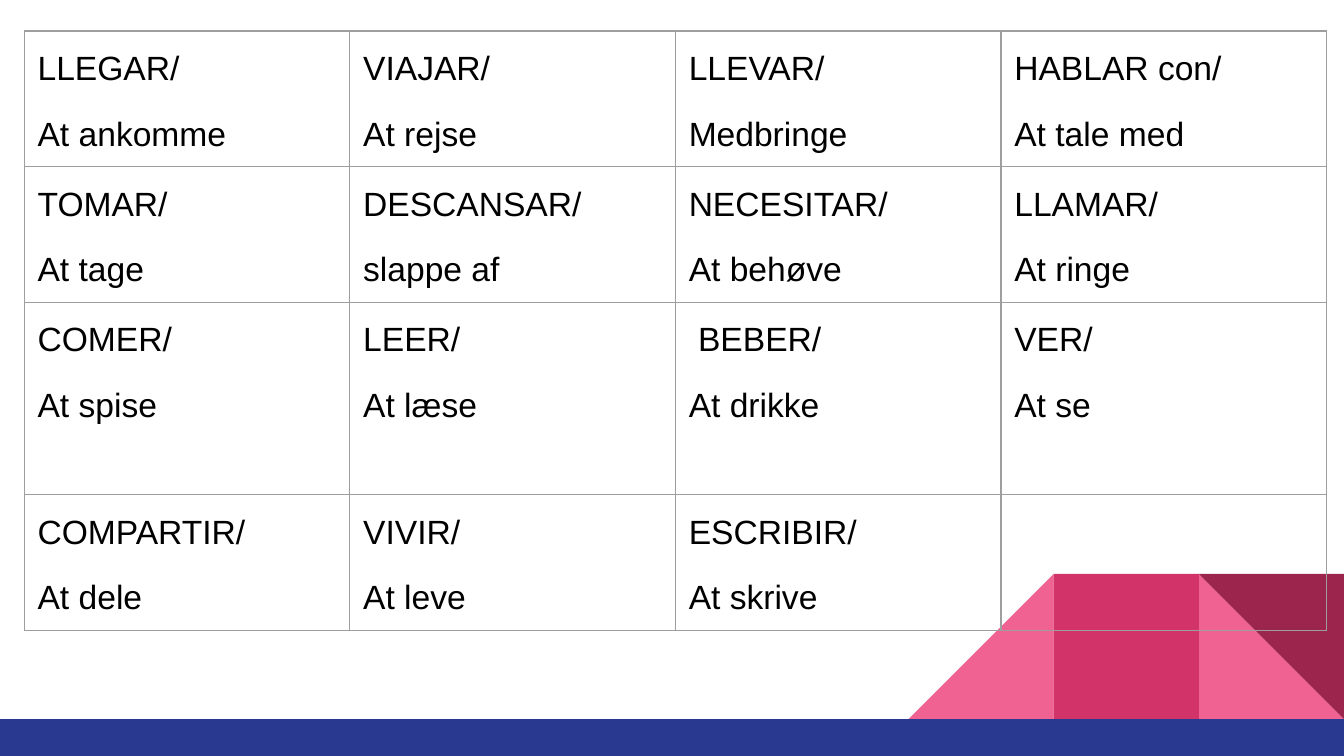
from typing import NamedTuple

from lxml import etree
from pptx import Presentation
from pptx.dml.color import RGBColor
from pptx.enum.shapes import MSO_SHAPE
from pptx.oxml.ns import qn
from pptx.util import Inches, Pt

RECT = MSO_SHAPE.RECTANGLE
TRIANGLE = MSO_SHAPE.RIGHT_TRIANGLE

PINK, ROSE, WINE, NAVY = "F06292", "D23369", "9C254D", "2A3990"
TEXT, GRID = "000000", "9E9E9E"
FONT = "Arial"

SLIDE_WIDTH = 10
SLIDE_HEIGHT = SLIDE_WIDTH * 9 / 16
BAND_TOP = 5.35
TILE = 1.08
TILES_LEFT, TILES_TOP = 6.76, 4.27
TABLE_WIDTH = 9.69
ROW_HEIGHTS = [1.01, 1.01, 1.43, 1.01]


class Block(NamedTuple):
    kind: MSO_SHAPE
    left: float
    top: float
    width: float
    height: float
    color: str
    rotation: int = 0


class Verb(NamedTuple):
    spanish: str
    danish: str


def tile(kind: MSO_SHAPE, column: int, color: str, rotation: int = 0) -> Block:
    left = TILES_LEFT + column * TILE
    return Block(kind, left, TILES_TOP, TILE, TILE, color, rotation)


BLOCKS = [
    tile(TRIANGLE, 2, PINK),
    tile(TRIANGLE, 0, PINK, 270),
    tile(RECT, 1, ROSE),
    tile(TRIANGLE, 2, WINE, 180),
    Block(RECT, 0, BAND_TOP, SLIDE_WIDTH, SLIDE_HEIGHT - BAND_TOP, NAVY),
]

VERBS = [
    [Verb("LLEGAR/", "At ankomme"), Verb("VIAJAR/", "At rejse"),
     Verb("LLEVAR/", "Medbringe"), Verb("HABLAR con/", "At tale med")],
    [Verb("TOMAR/", "At tage"), Verb("DESCANSAR/", "slappe af"),
     Verb("NECESITAR/", "At behøve"), Verb("LLAMAR/", "At ringe")],
    [Verb("COMER/", "At spise"), Verb("LEER/", "At læse"),
     Verb(" BEBER/", "At drikke"), Verb("VER/", "At se")],
    [Verb("COMPARTIR/", "At dele"), Verb("VIVIR/", "At leve"),
     Verb("ESCRIBIR/", "At skrive")],
]


def rgb(color: str) -> RGBColor:
    return RGBColor.from_string(color)


def add_block(s, block: Block) -> None:
    sp = s.shapes.add_shape(block.kind, Inches(block.left), Inches(block.top),
                            Inches(block.width), Inches(block.height))
    sp.rotation = block.rotation
    sp.shadow.inherit = False
    sp.fill.solid()
    sp.fill.fore_color.rgb = rgb(block.color)
    sp.line.fill.background()


def format_cell(cell) -> None:
    """Give the cell a thin border on all sides, even margins and no fill."""
    tcPr = cell._tc.get_or_add_tcPr()
    for side in ("lnL", "lnR", "lnT", "lnB"):
        ln = etree.SubElement(tcPr, qn(f"a:{side}"), w=str(Pt(0.75)))
        fill = etree.SubElement(ln, qn("a:solidFill"))
        etree.SubElement(fill, qn("a:srgbClr"), val=GRID)
    cell.fill.background()
    cell.margin_left = cell.margin_right = Inches(0.1)
    cell.margin_top = cell.margin_bottom = Inches(0.1)


def write_verb(cell, verb: Verb) -> None:
    tf = cell.text_frame
    tf.text = "\n".join(verb)
    for p in tf.paragraphs:
        p.line_spacing = 1.15
        p.font.name = FONT
        p.font.size = Pt(18)
        p.font.color.rgb = rgb(TEXT)
    tf.paragraphs[1].space_before = Pt(12)


def add_verb_table(s, verbs: list[list[Verb]]) -> None:
    rows, cols = len(verbs), len(verbs[0])
    table = s.shapes.add_table(
        rows, cols, Inches(0.18), Inches(0.23),
        Inches(TABLE_WIDTH), Inches(sum(ROW_HEIGHTS))).table
    table.first_row = table.horz_banding = False
    for row, height in zip(table.rows, ROW_HEIGHTS):
        row.height = Inches(height)
    for cell in table.iter_cells():
        format_cell(cell)
    for r, row_verbs in enumerate(verbs):
        for c, verb in enumerate(row_verbs):
            write_verb(table.cell(r, c), verb)


def main() -> None:
    prs = Presentation()
    prs.slide_width, prs.slide_height = Inches(SLIDE_WIDTH), Inches(SLIDE_HEIGHT)
    s = prs.slides.add_slide(prs.slide_layouts[6])
    for block in BLOCKS:
        add_block(s, block)
    add_verb_table(s, VERBS)
    prs.save("out.pptx")


if __name__ == "__main__":
    main()
